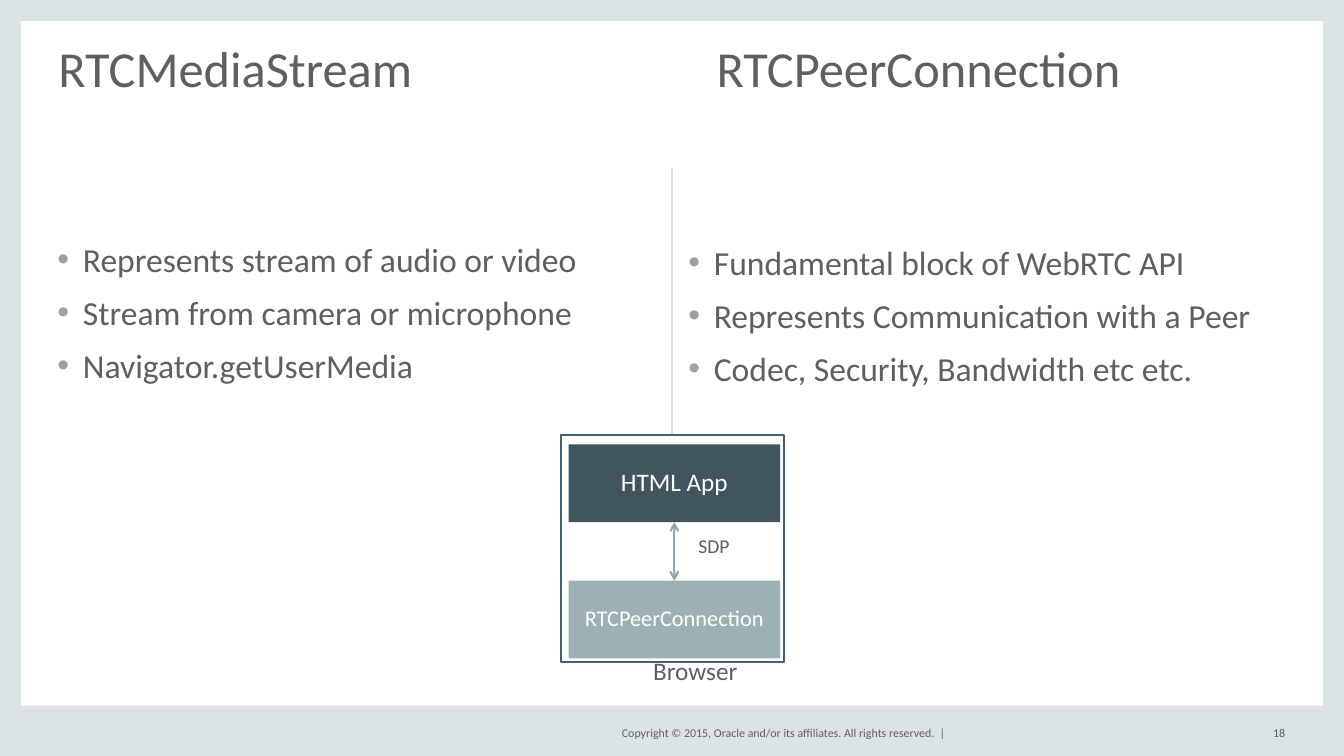
"""Build the slide on media streams and peer connections."""
from dataclasses import dataclass, field
from typing import Any, Optional

from lxml import etree
from pptx import Presentation
from pptx.dml.color import RGBColor
from pptx.enum import shapes, text
from pptx.oxml import ns
from pptx.util import Cm, Pt


@dataclass(frozen=True)
class Theme:
    font: str = "Calibri"
    edge: str = "DCE3E4"
    ink: str = "5F5F5F"
    dot: str = "9F9F9F"
    white: str = "FFFFFF"
    rim: str = "3E6179"
    dark: str = "41555E"
    pale: str = "9DB0B3"
    arrow: str = "8DA6B1"
    title: float = 36
    body: float = 24
    label: float = 18
    peer: float = 16
    note: float = 14
    foot: float = 8.5
    line: float = 1.5


THEME = Theme()
WIDE, HIGH, EDGE, BASE = 33.87, 19.05, 0.53, 1.27
LEFT, SPAN, TALL = 14.33, 5.33, 1.96
MID = LEFT + SPAN / 2


@dataclass(frozen=True)
class Area:
    x: float
    y: float
    w: float
    h: float

    def cm(self) -> tuple:
        return Cm(self.x), Cm(self.y), Cm(self.w), Cm(self.h)


@dataclass(frozen=True)
class Block:
    area: Area
    fill: str
    rim: Optional[str] = None
    words: str = ""
    size: float = THEME.label


@dataclass(frozen=True)
class Note:
    area: Area
    lines: list[str]
    size: float
    form: dict[str, Any] = field(default_factory=dict)
    anchor: Any = text.MSO_ANCHOR.TOP
    dots: bool = False


def apply(item: Any, form: dict[str, Any]) -> None:
    for name, value in form.items():
        setattr(item, name, value)


def add_xml(base: Any, tag: str, **attrs: str) -> Any:
    return etree.SubElement(base, ns.qn(tag), attrs)


def add_dot(para: Any) -> None:
    props = para._p.get_or_add_pPr()
    apply_at = {"marL": str(Cm(0.64)), "indent": str(-Cm(0.64))}
    for name, value in apply_at.items():
        props.set(name, value)
    add_xml(add_xml(props, "a:buClr"), "a:srgbClr", val=THEME.dot)
    add_xml(props, "a:buFont", typeface="Arial")
    add_xml(props, "a:buChar", char="•")


def write(shape: Any, note: Note, color: str) -> None:
    frame = shape.text_frame
    apply(frame, {"word_wrap": True, "vertical_anchor": note.anchor,
                  "margin_left": 0, "margin_right": 0,
                  "margin_top": 0, "margin_bottom": 0})
    for i, words in enumerate(note.lines):
        para = frame.add_paragraph() if i else frame.paragraphs[0]
        if note.dots:
            add_dot(para)
        apply(para, note.form)
        if i:
            apply(para, {"space_before": Pt(12), "line_spacing": 0.9})
        run = para.add_run()
        run.text = words
        apply(run.font, {"name": THEME.font, "size": Pt(note.size)})
        run.font.color.rgb = RGBColor.from_string(color)


def add_note(slide: Any, note: Note) -> None:
    write(slide.shapes.add_textbox(*note.area.cm()), note, THEME.ink)


def add_block(slide: Any, block: Block) -> Any:
    shape = slide.shapes.add_shape(shapes.MSO_SHAPE.RECTANGLE, *block.area.cm())
    shape.shadow.inherit = False
    shape.fill.solid()
    shape.fill.fore_color.rgb = RGBColor.from_string(block.fill)
    if block.rim:
        shape.line.color.rgb = RGBColor.from_string(block.rim)
        shape.line.width = Pt(THEME.line)
    else:
        shape.line.fill.background()
    if block.words:
        form = {"alignment": text.PP_ALIGN.CENTER, "line_spacing": 0.9}
        write(shape, Note(block.area, [block.words], block.size, form,
                          text.MSO_ANCHOR.MIDDLE), THEME.white)
    return shape


def add_line(slide: Any, x: float, top: float, end: float, color: str,
             ends: tuple = ()) -> None:
    line = slide.shapes.add_connector(
        shapes.MSO_CONNECTOR.STRAIGHT, Cm(x), Cm(top), Cm(x), Cm(end))
    line.line.color.rgb = RGBColor.from_string(color)
    line.line.width = Pt(THEME.line)
    if ends:
        line.begin_connect(ends[0], 2)
        line.end_connect(ends[1], 0)
        for tag in ("a:headEnd", "a:tailEnd"):
            add_xml(line.line._get_or_add_ln(), tag, type="arrow")
    add_xml(line._element.spPr, "a:effectLst")


FRAME = [
    Block(Area(0, 0, EDGE, HIGH), THEME.edge),
    Block(Area(WIDE - EDGE, 0, EDGE, HIGH), THEME.edge),
    Block(Area(0, HIGH - BASE, WIDE, BASE), THEME.edge),
    Block(Area(0, 0, WIDE, EDGE), THEME.edge),
]
HOST = Block(Area(14.15, 10.97, 5.61, 5.72), THEME.white, THEME.rim)
APP = Block(Area(LEFT, 11.2, SPAN, TALL), THEME.dark, words="HTML App")
PEER = Block(Area(LEFT, 14.63, SPAN, TALL), THEME.pale,
             words="RTCPeerConnection", size=THEME.peer)

HEAD = {"line_spacing": 0.8}
TIGHT = {"line_spacing": 0.9}
RIGHT = {"alignment": text.PP_ALIGN.RIGHT}
LOW, CENTER = text.MSO_ANCHOR.BOTTOM, text.MSO_ANCHOR.MIDDLE
NOTES = [
    Note(Area(14.94, 18.21, 8.89, 0.51),
         ["Copyright © 2015, Oracle and/or its affiliates. All rights reserved.  |"],
         THEME.foot, RIGHT, CENTER),
    Note(Area(31.32, 18.21, 1.07, 0.51), ["18"], THEME.foot, RIGHT, CENTER),
    Note(Area(1.47, 0, 10.77, 2.46), ["RTCMediaStream"], THEME.title, HEAD, LOW),
    Note(Area(18.06, 0, 10.77, 2.46), ["RTCPeerConnection"],
         THEME.title, HEAD, LOW),
    Note(Area(1.45, 6.02, 15.04, 5.28),
         ["Represents stream of audio or video",
          "Stream from camera or microphone",
          "Navigator.getUserMedia"], THEME.body, dots=True),
    Note(Area(17.35, 6.1, 15.04, 5.28),
         ["Fundamental block of WebRTC API",
          "Represents Communication with a Peer",
          "Codec, Security, Bandwidth etc etc."], THEME.body, dots=True),
    Note(Area(17.6, 13.51, 1.04, 0.64), ["SDP"], THEME.note, TIGHT),
    Note(Area(16.46, 16.61, 2.54, 0.76), ["Browser"], THEME.label, TIGHT),
]


def main() -> None:
    deck = Presentation()
    apply(deck, {"slide_width": Cm(WIDE), "slide_height": Cm(HIGH)})
    slide = deck.slides.add_slide(deck.slide_layouts[6])
    for bar in FRAME:
        add_block(slide, bar)
    add_line(slide, WIDE / 2, 4.24, 16.51, THEME.edge)
    add_block(slide, HOST)
    ends = add_block(slide, APP), add_block(slide, PEER)
    add_line(slide, MID, APP.area.y + TALL, PEER.area.y, THEME.arrow, ends)
    for note in NOTES:
        add_note(slide, note)
    deck.save("out.pptx")


if __name__ == "__main__":
    main()
